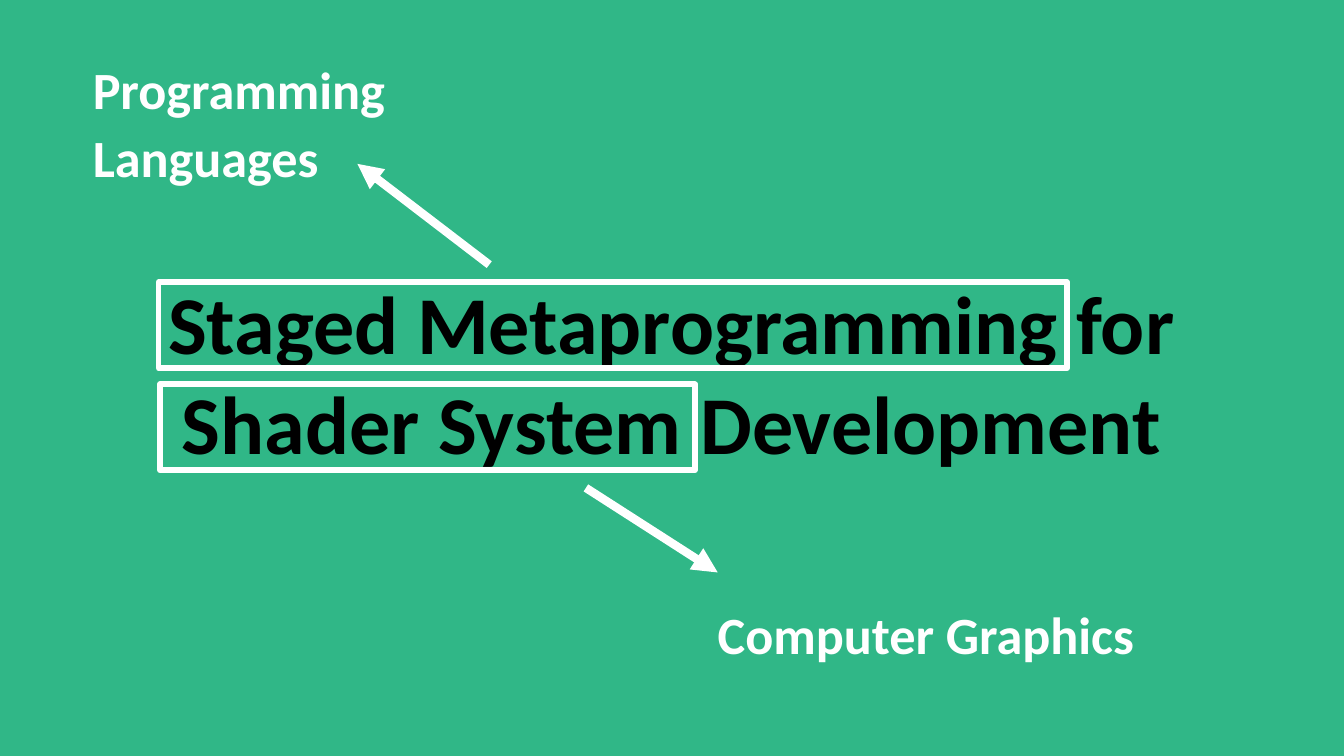
"""Build a slide that links the parts of a talk title to their research fields."""
import dataclasses

import lxml.etree
import pptx
import pptx.dml.color
import pptx.enum.shapes
import pptx.enum.text
import pptx.oxml.ns
import pptx.slide
import pptx.util

Pt = pptx.util.Pt
Align = pptx.enum.text.PP_ALIGN
Anchor = pptx.enum.text.MSO_ANCHOR
GREEN, WHITE, BLACK = "30B787", "FFFFFF", "000000"


@dataclasses.dataclass(frozen=True)
class Box:
    left: float
    top: float
    width: float
    height: float

    def lengths(self) -> list[int]:
        return [Pt(value) for value in dataclasses.astuple(self)]


@dataclasses.dataclass(frozen=True)
class TextBlock:
    box: Box
    lines: tuple[str, ...]
    size: float
    color: str
    line_spacing: float
    space_after: float = 8.5
    align: Align = Align.LEFT
    anchor: Anchor = Anchor.TOP


@dataclasses.dataclass(frozen=True)
class Arrow:
    start: tuple[float, float]
    end: tuple[float, float]


TEXT_BLOCKS = (
    TextBlock(Box(0, 121, 720, 163.4),
              ("Staged Metaprogramming for", "Shader System Development"),
              44, BLACK, 0.9, 0, Align.CENTER, Anchor.MIDDLE),
    TextBlock(Box(49.7, 41, 300, 66.2), ("Programming", "Languages"), 28, WHITE, 0.65),
    TextBlock(Box(384.5, 330.5, 236.2, 35.3), ("Computer Graphics",), 28, WHITE, 0.75),
)
TITLE_FRAMES = (Box(85, 151.2, 486.7, 46.1), Box(85.7, 205.9, 286.6, 46.1))
ARROWS = (Arrow((262.1, 141.8), (191.5, 87.8)), Arrow((313.9, 261.4), (384.5, 306.7)))


def rgb(value: str) -> pptx.dml.color.RGBColor:
    return pptx.dml.color.RGBColor.from_string(value)


def add_text(slide: pptx.slide.Slide, block: TextBlock) -> None:
    frame = slide.shapes.add_textbox(*block.box.lengths()).text_frame
    frame.word_wrap = True
    frame.vertical_anchor = block.anchor
    frame.margin_left = frame.margin_right = frame.margin_top = frame.margin_bottom = 0
    frame.text = "\n".join(block.lines)
    for index, paragraph in enumerate(frame.paragraphs):
        paragraph.alignment = block.align
        paragraph.line_spacing = block.line_spacing
        paragraph.space_before = Pt(6 if index else 0)
        paragraph.space_after = Pt(block.space_after)
        font = paragraph.runs[0].font
        font.name, font.size, font.bold = "Calibri", Pt(block.size), True
        font.color.rgb = rgb(block.color)


def add_frame(slide: pptx.slide.Slide, box: Box) -> None:
    shape = slide.shapes.add_shape(pptx.enum.shapes.MSO_SHAPE.RECTANGLE, *box.lengths())
    shape.shadow.inherit = False
    shape.fill.background()
    shape.line.color.rgb = rgb(WHITE)
    shape.line.width = Pt(3)


def add_arrow(slide: pptx.slide.Slide, arrow: Arrow) -> None:
    connector = slide.shapes.add_connector(
        pptx.enum.shapes.MSO_CONNECTOR.STRAIGHT,
        *(Pt(value) for value in arrow.start + arrow.end))
    connector.line.color.rgb = rgb(WHITE)
    connector.line.width = Pt(4.5)
    qn = pptx.oxml.ns.qn
    properties = connector._element.spPr
    lxml.etree.SubElement(properties.find(qn("a:ln")), qn("a:tailEnd"), type="triangle")
    lxml.etree.SubElement(properties, qn("a:effectLst"))


def main() -> None:
    presentation = pptx.Presentation()
    presentation.slide_width, presentation.slide_height = Pt(720), Pt(405)
    slide = presentation.slides.add_slide(presentation.slide_layouts[6])
    slide.background.fill.solid()
    slide.background.fill.fore_color.rgb = rgb(GREEN)
    for block in TEXT_BLOCKS:
        add_text(slide, block)
    for box in TITLE_FRAMES:
        add_frame(slide, box)
    for arrow in ARROWS:
        add_arrow(slide, arrow)
    presentation.save("out.pptx")


if __name__ == "__main__":
    main()
